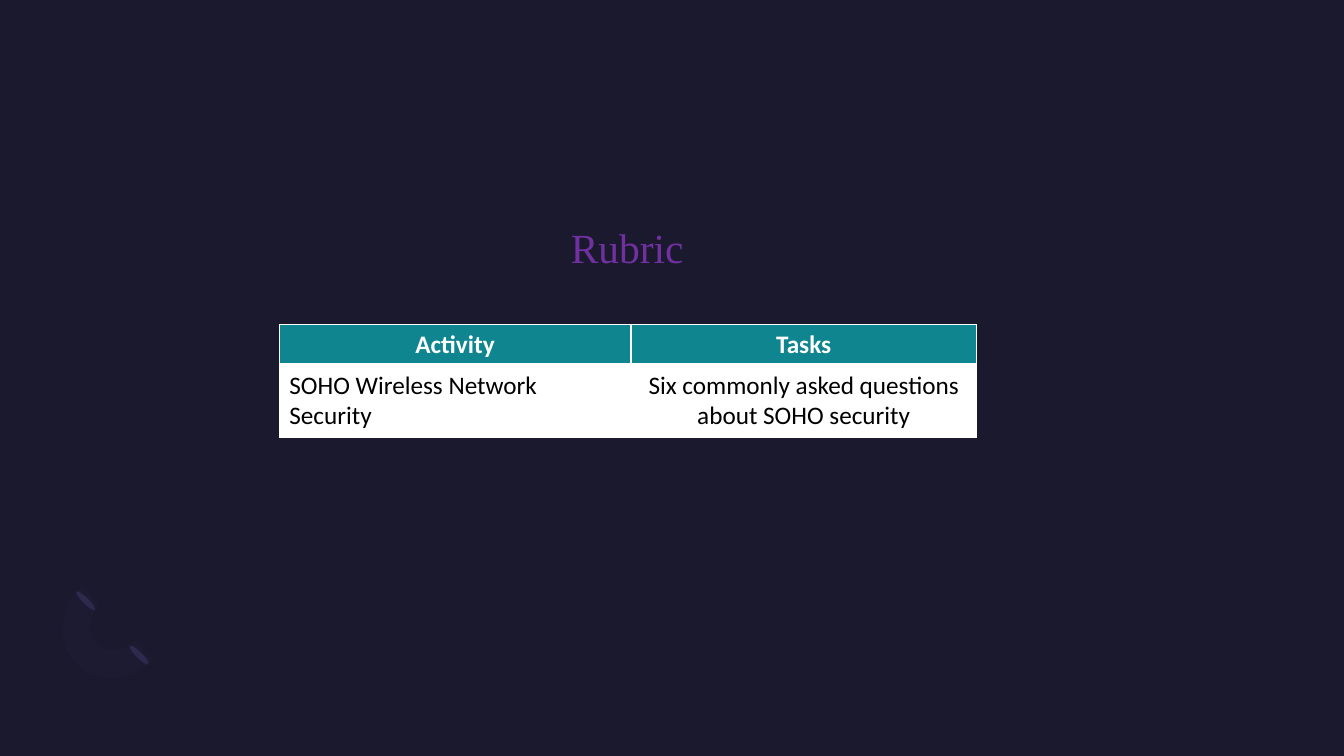
from dataclasses import dataclass

from lxml import etree
from pptx import Presentation
from pptx.dml.color import RGBColor
from pptx.enum.shapes import MSO_SHAPE
from pptx.enum.text import PP_ALIGN
from pptx.oxml.ns import qn
from pptx.util import Cm, Pt

OVAL = MSO_SHAPE.OVAL
LEFT, MID = PP_ALIGN.LEFT, PP_ALIGN.CENTER
WHITE, BLACK, TEAL = "FFFFFF", "000000", "0E858F"
NIGHT, DUSK, LILAC, PURPLE = "1B192E", "2C284A", "7771B2", "7030A0"
STEPS = 12

Point = tuple[float, float]


@dataclass
class Leaf:
    x: float
    y: float


@dataclass
class Entry:
    text: str
    align: int
    ink: str
    fill: str
    bold: bool = False
    base: float = 1


LEAVES = [Leaf(3.51, 16.51), Leaf(2.16, 15.14)]

# Ring outline: two points join with a line, four make a curve
RING: list[list[Point]] = [
    [(1.93, 16.74), (1.42, 16.23), (1.47, 15.37), (2.06, 14.78)],
    [(2.06, 14.78), (2.51, 15.24)],
    [(2.51, 15.24), (2.21, 15.52), (2.18, 15.98), (2.44, 16.21)],
    [(2.44, 16.21), (2.69, 16.46), (3.12, 16.43), (3.43, 16.15)],
    [(3.43, 16.15), (3.86, 16.61)],
    [(3.86, 16.61), (3.3, 17.17), (2.41, 17.25), (1.93, 16.74)],
]

ROWS = [
    [Entry("Activity", MID, WHITE, TEAL, True, 3),
     Entry("Tasks", MID, WHITE, TEAL, True, 3)],
    [Entry("SOHO Wireless Network Security", LEFT, BLACK, WHITE),
     Entry("Six commonly asked questions about SOHO security", MID, BLACK, WHITE)],
]
WIDTHS = [8.86, 8.71]
HEIGHTS = [1.02, 1.82]


def tint(fill, code: str) -> None:
    fill.solid()
    fill.fore_color.rgb = RGBColor.from_string(code)


def write(para, text: str, font: str, size: float, ink: str, bold: bool = False) -> None:
    run = para.add_run()
    run.text = text
    run.font.name, run.font.size, run.font.bold = font, Pt(size), bold
    run.font.color.rgb = RGBColor.from_string(ink)


def paint(shape, code: str) -> None:
    shape.shadow.inherit = False
    tint(shape.fill, code)
    shape.line.fill.background()


def add_leaf(slide, leaf: Leaf) -> None:
    wide, high = 0.15, 0.66
    shape = slide.shapes.add_shape(
        OVAL, Cm(leaf.x - wide / 2), Cm(leaf.y - high / 2), Cm(wide), Cm(high))
    shape.rotation = 135
    paint(shape, DUSK)


def trace(part: list[Point]) -> list[Point]:
    if len(part) == 2:
        return part[1:]
    spots = []
    for step in range(1, STEPS + 1):
        t = step / STEPS
        s = 1 - t
        mix = (s ** 3, 3 * s * s * t, 3 * s * t * t, t ** 3)
        spots.append((sum(m * p[0] for m, p in zip(mix, part)),
                      sum(m * p[1] for m, p in zip(mix, part))))
    return spots


def add_ring(slide) -> None:
    x, y = RING[0][0]
    pen = slide.shapes.build_freeform(Cm(x), Cm(y))
    pen.add_line_segments(
        [(Cm(a), Cm(b)) for part in RING for a, b in trace(part)], close=True)
    shape = pen.convert_to_shape()
    paint(shape, LILAC)
    color = shape.fill._xPr.find(qn("a:solidFill"))[0]
    etree.SubElement(color, qn("a:alpha"), val="3000")


def add_title(slide) -> None:
    box = slide.shapes.add_textbox(Cm(13.41), Cm(5.49), Cm(4.8), Cm(1.65))
    frame = box.text_frame
    frame.word_wrap = True
    frame.margin_left = frame.margin_right = frame.margin_bottom = 0
    frame.margin_top = Cm(0.1)
    para = frame.paragraphs[0]
    para.alignment = MID
    write(para, "Rubric", "Times New Roman", 29.6, PURPLE)


def edge(cell, base: float) -> None:
    props = cell._tc.get_or_add_tcPr()
    sides = {"lnL": 1, "lnR": 1, "lnT": 1, "lnB": base}
    for spot, (side, width) in enumerate(sides.items()):
        line = etree.Element(qn("a:" + side), w=str(Pt(width)))
        fill = etree.SubElement(line, qn("a:solidFill"))
        etree.SubElement(fill, qn("a:srgbClr"), val=WHITE)
        props.insert(spot, line)


def add_grid(slide) -> None:
    table = slide.shapes.add_table(
        len(ROWS), len(WIDTHS), Cm(7.04), Cm(8.18),
        Cm(sum(WIDTHS)), Cm(sum(HEIGHTS))).table
    for col, width in zip(table.columns, WIDTHS):
        col.width = Cm(width)
    for r, row in enumerate(ROWS):
        table.rows[r].height = Cm(HEIGHTS[r])
        for c, entry in enumerate(row):
            cell = table.cell(r, c)
            tint(cell.fill, entry.fill)
            edge(cell, entry.base)
            para = cell.text_frame.paragraphs[0]
            para.alignment = entry.align
            write(para, entry.text, "Calibri", 18, entry.ink, entry.bold)


def main() -> None:
    deck = Presentation()
    deck.slide_width, deck.slide_height = Cm(33.87), Cm(19.05)
    slide = deck.slides.add_slide(deck.slide_layouts[6])
    tint(slide.background.fill, NIGHT)

    # Corner ornament
    for leaf in LEAVES:
        add_leaf(slide, leaf)
    add_ring(slide)

    # Title and rubric table
    add_title(slide)
    add_grid(slide)
    deck.save("out.pptx")


if __name__ == "__main__":
    main()
